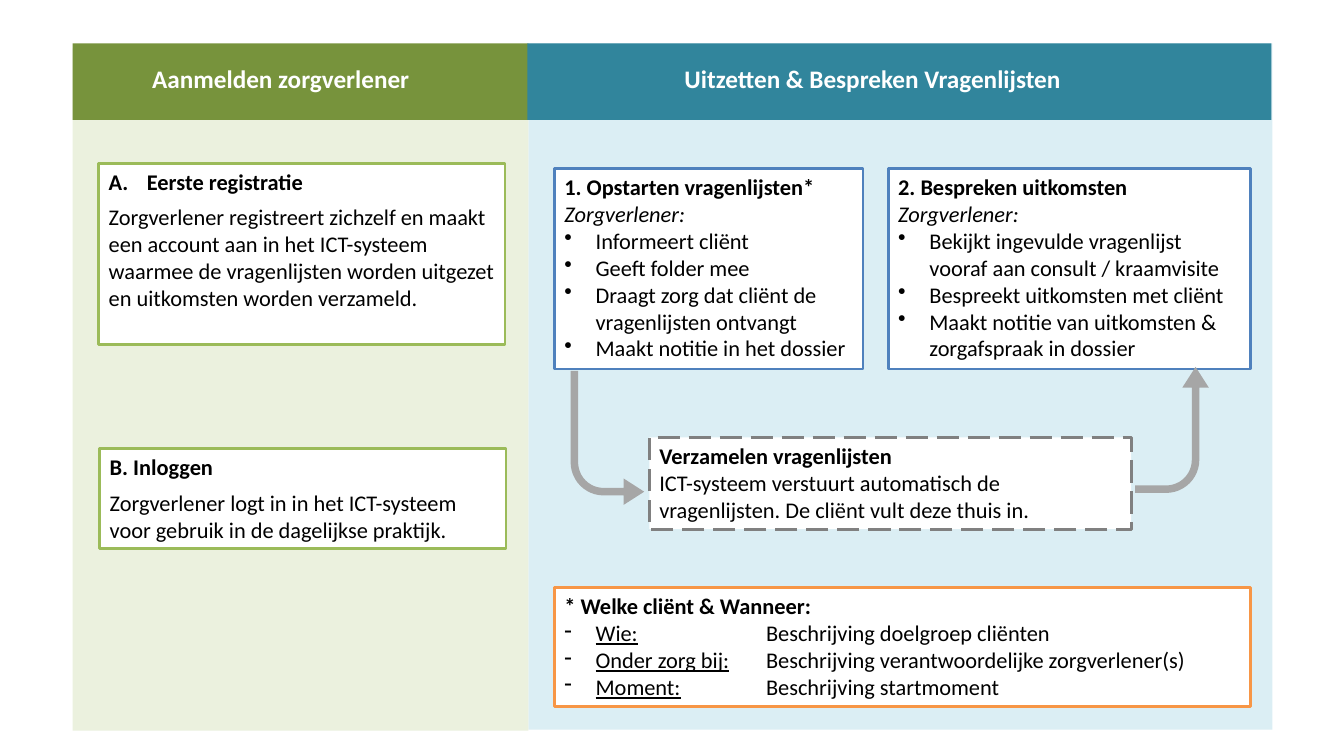
import pptx
import pptx.dml.color
import pptx.enum.dml
import pptx.enum.shapes
import pptx.enum.text
import pptx.oxml
import pptx.oxml.ns
import pptx.util

Inches = pptx.util.Inches
Pt = pptx.util.Pt
RGBColor = pptx.dml.color.RGBColor
Shape = pptx.enum.shapes.MSO_SHAPE
Align = pptx.enum.text.PP_ALIGN
Anchor = pptx.enum.text.MSO_ANCHOR
Dash = pptx.enum.dml.MSO_LINE
qn = pptx.oxml.ns.qn

WHITE = RGBColor(0xFF, 0xFF, 0xFF)
BLACK = RGBColor(0x00, 0x00, 0x00)
LIME = RGBColor(0xEB, 0xF1, 0xDE)
GREEN = RGBColor(0x9B, 0xBB, 0x59)
OLIVE = RGBColor(0x77, 0x93, 0x3C)
ICE = RGBColor(0xDB, 0xEE, 0xF4)
BLUE = RGBColor(0x4F, 0x81, 0xBD)
TEAL = RGBColor(0x31, 0x85, 0x9C)
ORANGE = RGBColor(0xF7, 0x96, 0x46)
SILVER = RGBColor(0xA6, 0xA6, 0xA6)
GREY = RGBColor(0x80, 0x80, 0x80)

DOT = '<a:buChar {} char="•"/>'
HYPHEN = '<a:buChar {} char="-"/>'
LETTER = '<a:buAutoNum {} type="alphaUcPeriod"/>'
STOP = '<a:tabLst {}><a:tab pos="%d" algn="l"/></a:tabLst>'


class Board:
    face = "Calibri"
    size = 16
    head = 18
    edge = 2

    def __init__(self, slide):
        self.slide = slide

    def shape(self, kind, area, fill):
        form = self.slide.shapes.add_shape(kind, *map(Inches, area))
        form.shadow.inherit = False
        form.fill.solid()
        form.fill.fore_color.rgb = fill
        form.line.fill.background()
        return form

    def panel(self, area, fill):
        return self.shape(Shape.RECTANGLE, area, fill)

    def font(self, para, size, color, bold=False, italic=False):
        font = para.font
        font.name, font.size = self.face, Pt(size)
        font.bold, font.italic = bold, italic
        font.color.rgb = color

    def title(self, area, text, wrap=True):
        box = self.slide.shapes.add_textbox(*map(Inches, area))
        box.text_frame.word_wrap = wrap
        para = box.text_frame.paragraphs[0]
        para.text = text
        para.alignment = Align.CENTER
        self.font(para, self.head, WHITE, bold=True)

    def mark(self, para, bullet, indent, stop=None):
        """Hang a bullet on the paragraph, with a tab stop if given."""
        props = para._p.get_or_add_pPr()
        props.set("marL", str(Inches(indent)))
        props.set("indent", str(-Inches(indent)))
        parts = [bullet]
        if stop:
            parts.append(STOP % Inches(stop))
        for part in parts:
            xml = part.replace("{}", pptx.oxml.ns.nsdecls("a"))
            props.append(pptx.oxml.parse_xml(xml))

    def card(self, area, color, head, body=(), role=None, items=(),
             terms=(), letter=False, after=0, dash=None):
        """Framed box: bold head, italic role, body, bullets, term list."""
        box = self.panel(area, WHITE)
        box.line.color.rgb = color
        box.line.width = Pt(self.edge)
        if dash:
            box.line.dash_style = dash
        frame = box.text_frame
        frame.word_wrap = True
        frame.vertical_anchor = Anchor.TOP

        def add(text, **style):
            para = frame.paragraphs[0]
            if para.runs:
                para = frame.add_paragraph()
            para.alignment = Align.LEFT
            para.space_after = Pt(after)
            bullet = style.pop("bullet", None)
            if bullet:
                self.mark(para, *bullet)
            para.add_run().text = text
            self.font(para, self.size, BLACK, **style)
            return para

        add(head, bold=True, bullet=(LETTER, 0.38) if letter else None)
        if role:
            add(role, italic=True)
        for text in body:
            add(text)
        for text in items:
            add(text, bullet=(DOT, 0.31))
        for term, text in terms:
            para = add(term, bullet=(HYPHEN, 0.31, 2))
            para.runs[0].font.underline = True
            para.add_run().text = "\t" + text

    def arrow(self, area, flip, turn=0):
        bend = self.shape(Shape.BENT_ARROW, area, SILVER)
        for i, value in enumerate((0.102, 0.18, 0.28, 0.45)):
            bend.adjustments[i] = value
        bend.rotation = turn
        bend._element.spPr.find(qn("a:xfrm")).set(flip, "1")


def main():
    deck = pptx.Presentation()
    deck.slide_width, deck.slide_height = Inches(13.33), Inches(7.5)
    board = Board(deck.slides.add_slide(deck.slide_layouts[6]))

    board.panel((5.24, 0.43, 7.38, 6.81), ICE)
    board.panel((0.72, 0.48, 4.52, 6.77), LIME)
    board.panel((0.72, 0.43, 4.52, 0.76), OLIVE)
    board.panel((5.23, 0.43, 7.38, 0.76), TEAL)
    board.title((0.99, 0.58, 3.59, 0.4), "Aanmelden zorgverlener")
    board.title((6.67, 0.58, 3.97, 0.4),
                "Uitzetten & Bespreken Vragenlijsten", wrap=False)

    board.card((0.98, 1.62, 4.03, 1.8), GREEN, "Eerste registratie",
               ["Zorgverlener registreert zichzelf en maakt een account aan "
                "in het ICT-systeem waarmee de vragenlijsten worden uitgezet "
                "en uitkomsten worden verzameld."], letter=True, after=6)
    board.card((0.99, 4.45, 4.03, 0.99), GREEN, "B. Inloggen",
               ["Zorgverlener logt in in het ICT-systeem voor gebruik in de "
                "dagelijkse praktijk."], after=6)

    board.card((5.5, 1.67, 3.06, 1.99), BLUE, "1. Opstarten vragenlijsten*",
               role="Zorgverlener:",
               items=["Informeert cliënt", "Geeft folder mee",
                      "Draagt zorg dat cliënt de vragenlijsten ontvangt",
                      "Maakt notitie in het dossier"])
    board.card((8.81, 1.67, 3.59, 1.99), BLUE, "2. Bespreken uitkomsten",
               role="Zorgverlener:",
               items=["Bekijkt ingevulde vragenlijst vooraf aan consult / "
                      "kraamvisite",
                      "Bespreekt uitkomsten met cliënt",
                      "Maakt notitie van uitkomsten & zorgafspraak in "
                      "dossier"])
    board.card((6.44, 4.34, 4.78, 0.91), GREY, "Verzamelen vragenlijsten",
               ["ICT-systeem verstuurt automatisch de vragenlijsten. "
                "De cliënt vult deze thuis in."], dash=Dash.LONG_DASH)
    board.card((5.5, 5.83, 6.9, 1.18), ORANGE, "* Welke cliënt & Wanneer:",
               terms=[("Wie:", "Beschrijving doelgroep cliënten"),
                      ("Onder zorg bij:",
                       "Beschrijving verantwoordelijke zorgverlener(s)"),
                      ("Moment:", "Beschrijving startmoment")])

    board.arrow((5.66, 3.68, 0.73, 1.33), "flipV")
    board.arrow((11, 3.9, 1.25, 0.73), "flipH", turn=90)
    deck.save("out.pptx")


if __name__ == "__main__":
    main()
